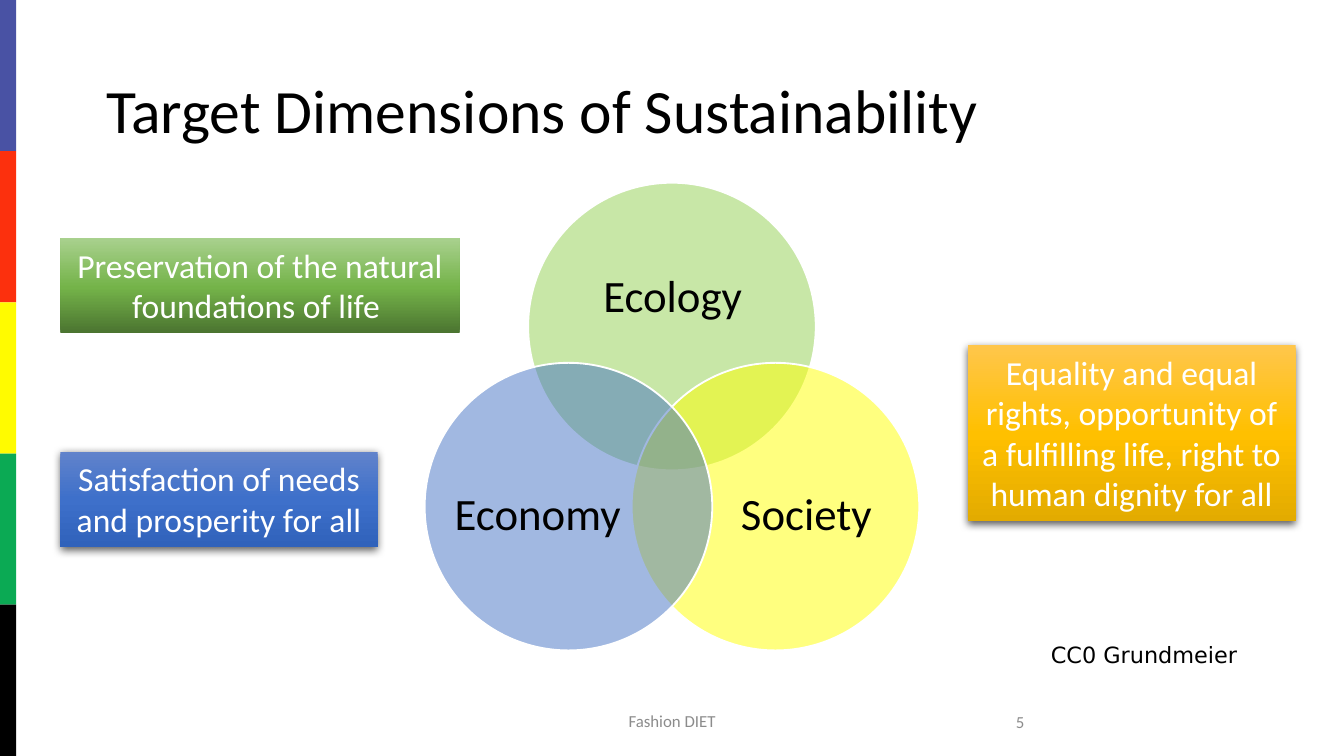
"""Build the slide on the target dimensions of sustainability."""
from copy import deepcopy

from lxml import etree
from pptx import Presentation
from pptx.dml.color import RGBColor
from pptx.enum.shapes import MSO_SHAPE
from pptx.enum.text import MSO_ANCHOR, MSO_AUTO_SIZE, PP_ALIGN
from pptx.oxml.ns import qn
from pptx.util import Inches, Pt

RECT, OVAL = MSO_SHAPE.RECTANGLE, MSO_SHAPE.OVAL
LEFT, MID, RIGHT = PP_ALIGN.LEFT, PP_ALIGN.CENTER, PP_ALIGN.RIGHT
CENTER, TOP = MSO_ANCHOR.MIDDLE, MSO_ANCHOR.TOP
GROW, FIXED = MSO_AUTO_SIZE.SHAPE_TO_FIT_TEXT, MSO_AUTO_SIZE.NONE

THEME = {
    "font": "Calibri", "credit_font": "DejaVu Sans",
    "title": 33, "label": 24, "card": 18, "credit": 12, "foot": 9,
    "ink": "000000", "paper": "FFFFFF", "gray": "8C8C8C",
    "bands": ["4952A4", "FC300D", "FFFB00", "0BAA54", "000000"],
}
WIDTH, BAND, DISC = 10, 0.12, 2.14
HEIGHT = WIDTH * 9 / 16

TITLE = "Target Dimensions of Sustainability"
DISCS = [
    ("Ecology", "92D050", (3.93, 1.36), (4.22, 1.74, 1.57, 0.96)),
    ("Society", "FFFF00", (4.7, 2.7), (5.36, 3.25, 1.28, 1.18)),
    ("Economy", "4472C4", (3.16, 2.7), (3.36, 3.25, 1.28, 1.18)),
]
CARDS = [
    ("Preservation of the natural foundations of life ", (0.45, 1.77, 2.97, 0.71),
     [(0, "4B7430"), (0.48, "74B349"), (1, "A9D18E")], 90, False),
    ("Equality and equal rights, opportunity of a fulfilling life, "
     "right to human dignity for all", (7.2, 2.57, 2.44, 1.31),
     [(0, "FFC64B"), (0.5, "FFC000"), (1, "E3AB00")], 270, True),
    ("Satisfaction of needs and prosperity for all", (0.45, 3.36, 2.36, 0.71),
     [(0, "6183CB"), (0.5, "3E70CA"), (1, "3062BB")], 270, True),
]
NOTES = [
    ("Fashion DIET", (3.31, 5.21, 3.38, 0.3), "foot", "gray", "font", MID, CENTER, FIXED),
    ("5", (5.47, 5.22, 2.25, 0.3), "foot", "gray", "font", RIGHT, CENTER, FIXED),
    ("CC0 Grundmeier", (7.72, 4.72, 1.92, 0.3), "credit", "ink", "credit_font", LEFT, TOP, GROW),
]


def rgb(code):
    """Turn a hex code into a colour."""
    return RGBColor.from_string(code)


def write(shape, text, size, ink="ink", font="font", align=MID, anchor=CENTER, fit=FIXED):
    """Set the text of a shape and its format."""
    frame = shape.text_frame
    frame.text = text
    frame.word_wrap, frame.auto_size, frame.vertical_anchor = True, fit, anchor
    para = frame.paragraphs[0]
    para.alignment = align
    face = para.runs[0].font
    face.name, face.size = THEME[font], Pt(THEME[size])
    face.color.rgb = rgb(THEME[ink])
    return frame


def add_shape(slide, kind, box):
    """Add a plain shape without line or shadow."""
    shape = slide.shapes.add_shape(kind, *map(Inches, box))
    shape.shadow.inherit = False
    shape.line.fill.background()
    return shape


def add_box(slide, box):
    """Add an empty text box."""
    return slide.shapes.add_textbox(*map(Inches, box))


def paint(shape, code, alpha=None):
    """Fill a shape with one colour, clear to some degree."""
    shape.fill.solid()
    shape.fill.fore_color.rgb = rgb(code)
    if alpha:
        tint = shape.element.spPr.find(qn("a:solidFill"))[0]
        etree.SubElement(tint, qn("a:alpha"), val=str(alpha * 1000))


def blend(shape, stops, angle):
    """Fill a shape with a gradient of three stops."""
    shape.fill.gradient()
    shape.fill.gradient_angle = angle
    chain = shape.element.spPr.find(qn("a:gradFill")).find(qn("a:gsLst"))
    chain.append(deepcopy(chain[0]))
    for stop, (place, code) in zip(shape.fill.gradient_stops, stops):
        stop.position, stop.color.rgb = place, rgb(code)


def shade(shape):
    """Drop a soft shadow below a shape."""
    effects = shape.element.spPr.find(qn("a:effectLst"))
    drop = etree.SubElement(effects, qn("a:outerShdw"), blurRad=str(Pt(4.5)),
                            dist=str(Pt(1.5)), dir="5400000", rotWithShape="0")
    tint = etree.SubElement(drop, qn("a:srgbClr"), val=THEME["ink"])
    etree.SubElement(tint, qn("a:alpha"), val="63000")


def main():
    """Lay out the slide and save it."""
    deck = Presentation()
    deck.slide_width, deck.slide_height = Inches(WIDTH), Inches(HEIGHT)
    slide = deck.slides.add_slide(deck.slide_layouts[5])

    step = HEIGHT / len(THEME["bands"])
    for row, code in enumerate(THEME["bands"]):
        paint(add_shape(slide, RECT, (0, row * step, BAND, step)), code)

    title = slide.shapes.title
    title.left, title.top, title.width, title.height = map(Inches, (0.69, 0.3, 8.62, 1.09))
    write(title, TITLE, "title", align=LEFT).paragraphs[0].line_spacing = 0.9

    for name, code, spot, area in DISCS:
        disc = add_shape(slide, OVAL, (*spot, DISC, DISC))
        paint(disc, code, 50)
        disc.line.color.rgb = rgb(THEME["paper"])
        disc.line.width = Pt(1)
        frame = write(add_box(slide, area), name, "label")
        frame.margin_left = frame.margin_right = frame.margin_top = frame.margin_bottom = 0
        frame.paragraphs[0].line_spacing = 0.9

    for text, box, stops, angle, raised in CARDS:
        card = add_shape(slide, RECT, box)
        blend(card, stops, angle)
        if raised:
            shade(card)
        write(card, text, "card", "paper", anchor=TOP, fit=GROW)

    for text, box, *style in NOTES:
        write(add_box(slide, box), text, *style)

    deck.save("out.pptx")


if __name__ == "__main__":
    main()
